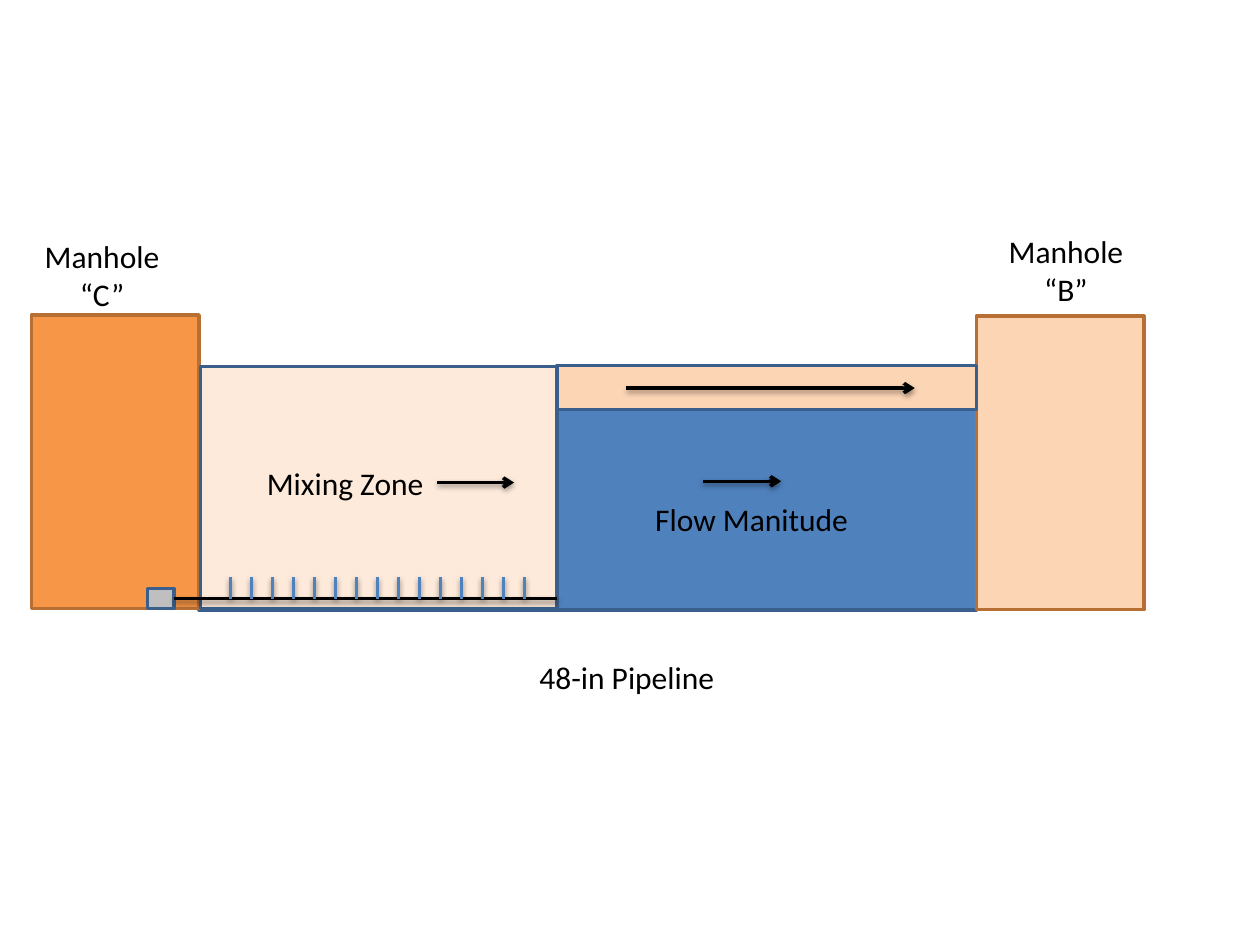
import dataclasses

import lxml.etree
import pptx
import pptx.dml.color
import pptx.enum.shapes
import pptx.enum.text
import pptx.oxml.ns
import pptx.util

Inches = pptx.util.Inches
Pt = pptx.util.Pt


@dataclasses.dataclass(frozen=True)
class Theme:
    font: str = "Calibri"
    text_size: int = 18
    line_width: int = 2
    black: str = "000000"
    water: str = "4F81BD"
    water_edge: str = "3A5F8C"
    manhole: str = "F79646"
    manhole_edge: str = "B76F34"
    pale_orange: str = "FCD5B5"
    mixing: str = "FDEADA"
    valve: str = "BFBFBF"


def rgb(value):
    return pptx.dml.color.RGBColor.from_string(value)


class Diagram:
    def __init__(self, slide, theme):
        self.slide = slide
        self.theme = theme

    def box(self, x, y, w, h, fill, edge):
        sp = self.slide.shapes.add_shape(
            pptx.enum.shapes.MSO_SHAPE.RECTANGLE,
            Inches(x), Inches(y), Inches(w), Inches(h))
        sp.shadow.inherit = False
        sp.fill.solid()
        sp.fill.fore_color.rgb = rgb(fill)
        sp.line.color.rgb = rgb(edge)
        sp.line.width = Pt(self.theme.line_width)
        return sp

    def label(self, x, y, w, h, text):
        sp = self.slide.shapes.add_textbox(Inches(x), Inches(y), Inches(w), Inches(h))
        tf = sp.text_frame
        tf.word_wrap = False
        tf.auto_size = pptx.enum.text.MSO_AUTO_SIZE.SHAPE_TO_FIT_TEXT
        tf.text = text
        for p in tf.paragraphs:
            p.alignment = pptx.enum.text.PP_ALIGN.CENTER
            for r in p.runs:
                r.font.name = self.theme.font
                r.font.size = Pt(self.theme.text_size)
                r.font.color.rgb = rgb(self.theme.black)

    def line(self, x1, y1, x2, y2, color, arrow=False):
        sp = self.slide.shapes.add_connector(
            pptx.enum.shapes.MSO_CONNECTOR.STRAIGHT,
            Inches(x1), Inches(y1), Inches(x2), Inches(y2))
        sp.line.color.rgb = rgb(color)
        sp.line.width = Pt(self.theme.line_width)
        qn = pptx.oxml.ns.qn
        sub = lxml.etree.SubElement
        sp_pr = sp._element.spPr
        if arrow:
            sub(sp_pr.find(qn("a:ln")), qn("a:tailEnd"), type="arrow")
        effects = sub(sp_pr, qn("a:effectLst"))
        shadow = sub(effects, qn("a:outerShdw"), blurRad=str(Pt(3.1)),
                     dist=str(Pt(1.6)), dir="5400000", rotWithShape="0")
        color_el = sub(shadow, qn("a:srgbClr"), val=self.theme.black)
        sub(color_el, qn("a:alpha"), val="38000")
        return sp


def main():
    prs = pptx.Presentation()
    prs.slide_width = Inches(10)
    prs.slide_height = Inches(7.5)
    s = prs.slides.add_slide(prs.slide_layouts[6])
    t = Theme()
    d = Diagram(s, t)

    d.box(1.58, 2.92, 6.17, 1.92, t.water, t.water_edge)
    d.box(0.25, 2.5, 1.33, 2.33, t.manhole, t.manhole_edge)
    d.box(7.75, 2.51, 1.33, 2.33, t.pale_orange, t.manhole_edge)
    d.box(1.59, 2.91, 2.83, 1.92, t.mixing, t.water_edge)
    d.box(4.42, 2.9, 3.33, 0.35, t.pale_orange, t.water_edge)
    valve = d.box(1.17, 4.67, 0.21, 0.16, t.valve, t.water_edge)

    diffuser_y = 4.75
    diffuser = d.line(1.38, diffuser_y, 4.42, diffuser_y, t.black)
    diffuser.begin_connect(valve, 3)
    for i in range(15):
        x = 1.83 + i / 6
        d.line(x, diffuser_y, x, 4.58, t.water)

    for x1, x2, y in ((3.47, 4.08, 3.83), (4.97, 7.26, 3.08), (5.58, 6.2, 3.82)):
        d.line(x1, y, x2, y, t.black, arrow=True)

    d.label(0.25, 1.83, 1.12, 0.71, "Manhole\n“C”")
    d.label(7.9, 1.79, 1.12, 0.71, "Manhole\n“B”")
    d.label(4.17, 5.17, 1.61, 0.4, "48-in Pipeline")
    d.label(2.01, 3.63, 1.46, 0.4, "Mixing Zone")
    d.label(5.09, 3.92, 1.75, 0.4, "Flow Manitude")

    prs.save("out.pptx")


if __name__ == "__main__":
    main()
